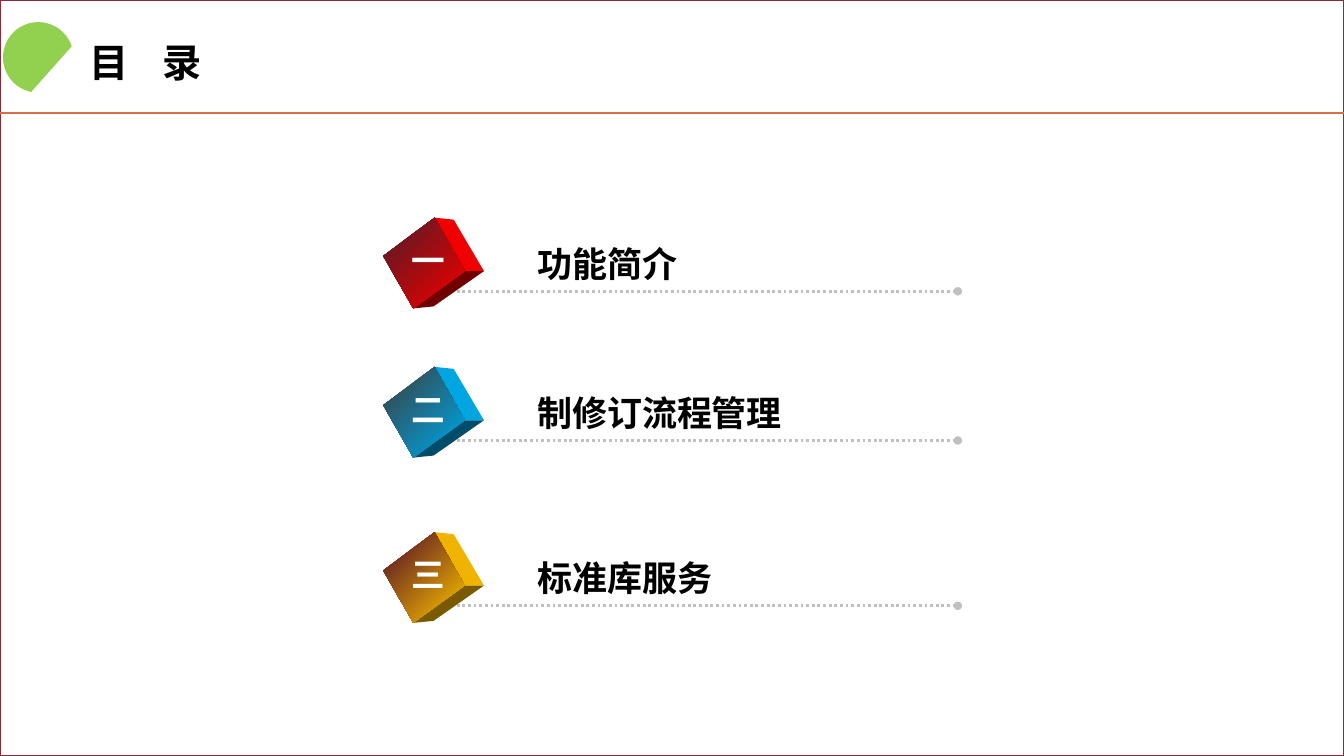
"""Build the contents slide with three numbered cube entries."""
from lxml import etree
from pptx import Presentation
from pptx import util as u
from pptx.dml.color import RGBColor
from pptx.enum import dml, shapes, text
from pptx.oxml import ns

TITLE = "目\t录"
ENTRIES = [
    {"number": "一", "label": "功能简介", "line_y": 2.89,
     "front": ("5E1A24", "E60000"), "side": "F00000", "base": "700000"},
    {"number": "二", "label": "制修订流程管理", "line_y": 4.37,
     "front": ("36474C", "00A0DC"), "side": "00A5E2", "base": "004C6B"},
    {"number": "三", "label": "标准库服务", "line_y": 6.01,
     "front": ("5E1A24", "F0B400"), "side": "F0B400", "base": "785A00"},
]
THEME = {
    "font": "Arial", "title": 28, "label": 25, "number": 24,
    "text": "000000", "light": "FFFFFF", "paper": "FFFFFF",
    "frame": "8B2836", "rule": "D66E49", "accent": "92D050", "dots": "C0C0C0",
}
SLIDE_WIDTH, SLIDE_HEIGHT = 13.33, 7.5
RULE_Y = 1.12
LINE_LEFT, LINE_RIGHT = 4.25, 9.5
FRONT_FACE = [(3.8, -0.35), (4.31, -0.73), (4.61, -0.2), (4.1, 0.17)]
BACK_TOP, BACK_RIGHT, BACK_BOTTOM = (4.5, -0.71), (4.8, -0.2), (4.3, 0.15)
SIDE_FACE = [FRONT_FACE[1], BACK_TOP, BACK_RIGHT, FRONT_FACE[2]]
BASE_FACE = [FRONT_FACE[3], FRONT_FACE[2], BACK_RIGHT, BACK_BOTTOM]


def color(value):
    return RGBColor.from_string(value)


def add_shape(slide, kind, box, fill):
    shape = slide.shapes.add_shape(kind, *map(u.Inches, box))
    shape.shadow.inherit = False
    shape.fill.solid()
    shape.fill.fore_color.rgb = color(fill)
    shape.line.fill.background()
    return shape


def add_line(slide, left, right, y, stroke, width):
    line = slide.shapes.add_connector(
        shapes.MSO_CONNECTOR.STRAIGHT, *map(u.Inches, (left, y, right, y)))
    line.line.color.rgb = color(stroke)
    line.line.width = u.Pt(width)
    etree.SubElement(line._element.spPr, ns.qn("a:effectLst"))
    return line


def add_text(slide, box, content, size, fill, align=text.PP_ALIGN.LEFT,
             anchor=text.MSO_ANCHOR.MIDDLE, spacing=None, tab=None):
    frame = slide.shapes.add_textbox(*map(u.Inches, box)).text_frame
    frame.word_wrap = True
    frame.vertical_anchor = anchor
    paragraph = frame.paragraphs[0]
    paragraph.text = content
    paragraph.alignment = align
    paragraph.line_spacing = spacing
    if tab:
        tabs = etree.SubElement(paragraph._p.get_or_add_pPr(), ns.qn("a:tabLst"))
        etree.SubElement(tabs, ns.qn("a:tab"), pos=str(u.Inches(tab)), algn="l")
    paragraph.font.name = THEME["font"]
    paragraph.font.size = u.Pt(size)
    paragraph.font.bold = True
    paragraph.font.color.rgb = color(fill)


def add_face(slide, points, line_y, fills):
    corners = [(u.Inches(x), u.Inches(line_y + dy)) for x, dy in points]
    builder = slide.shapes.build_freeform(*corners[0])
    builder.add_line_segments(corners[1:], close=True)
    face = builder.convert_to_shape()
    face.shadow.inherit = False
    face.line.fill.background()
    if len(fills) == 1:
        face.fill.solid()
        face.fill.fore_color.rgb = color(fills[0])
        return
    face.fill.gradient()
    face.fill.gradient_angle = 315
    for stop, position, fill in zip(face.fill.gradient_stops, (0.1, 0.9), fills):
        stop.position = position
        stop.color.rgb = color(fill)


def add_entry(slide, entry):
    y = entry["line_y"]
    dotted = add_line(slide, LINE_LEFT, LINE_RIGHT, y, THEME["dots"], 2)
    dotted.line.dash_style = dml.MSO_LINE.ROUND_DOT
    etree.SubElement(dotted.line._get_or_add_ln(), ns.qn("a:tailEnd"), type="oval")
    add_face(slide, SIDE_FACE, y, [entry["side"]])
    add_face(slide, BASE_FACE, y, [entry["base"]])
    add_face(slide, FRONT_FACE, y, entry["front"])
    add_text(slide, (5.23, y - 0.54, 3.87, 0.52), entry["label"],
             THEME["label"], THEME["text"])
    add_text(slide, (3.98, y - 0.56, 0.54, 0.5), entry["number"],
             THEME["number"], THEME["light"], text.PP_ALIGN.CENTER)


def main():
    presentation = Presentation()
    presentation.slide_width = u.Inches(SLIDE_WIDTH)
    presentation.slide_height = u.Inches(SLIDE_HEIGHT)
    slide = presentation.slides.add_slide(presentation.slide_layouts[6])

    frame = add_shape(slide, shapes.MSO_SHAPE.RECTANGLE,
                      (0, 0, SLIDE_WIDTH, SLIDE_HEIGHT), THEME["paper"])
    frame.line.color.rgb = color(THEME["frame"])
    frame.line.width = u.Pt(1)
    add_line(slide, 0, SLIDE_WIDTH, RULE_Y, THEME["rule"], 1.5)
    add_text(slide, (0.79, 0.34, 11.87, 0.56), TITLE, THEME["title"],
             THEME["text"], anchor=text.MSO_ANCHOR.BOTTOM, spacing=0.9, tab=0.72)
    chord = add_shape(slide, shapes.MSO_SHAPE.CHORD,
                      (0.03, 0.22, 0.7, 0.7), THEME["accent"])
    for index, degrees in enumerate((101.6, 341.6)):
        chord.adjustments[index] = degrees * 0.6

    for entry in ENTRIES:
        add_entry(slide, entry)
    presentation.save("out.pptx")


if __name__ == "__main__":
    main()
